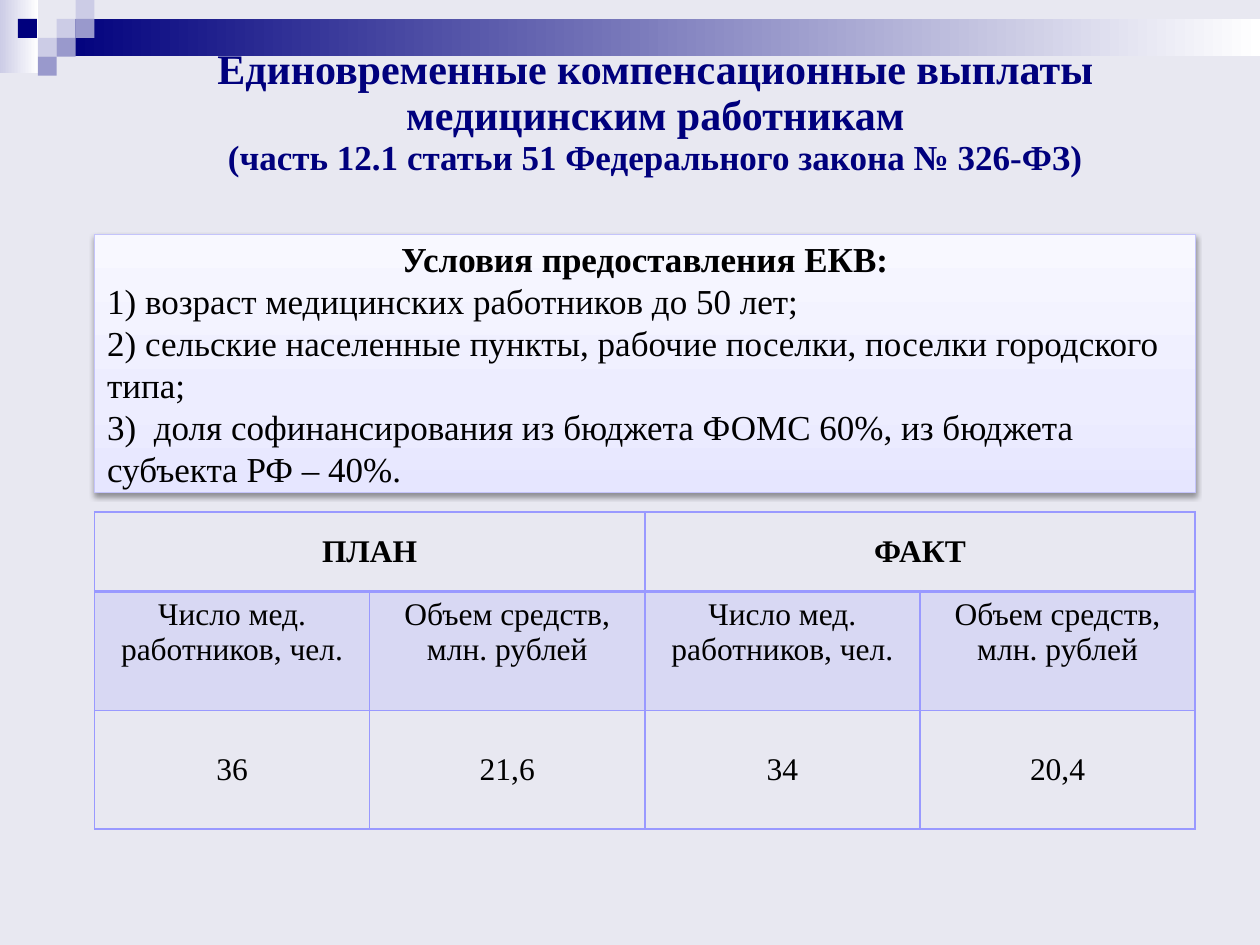
"""Build a slide on lump-sum compensation payments to medical workers."""
from copy import deepcopy
from dataclasses import dataclass

from lxml.etree import SubElement
from pptx import Presentation
from pptx.dml.color import RGBColor
from pptx.enum.shapes import MSO_SHAPE
from pptx.enum.text import MSO_ANCHOR, MSO_AUTO_SIZE, PP_ALIGN
from pptx.oxml.ns import qn
from pptx.util import Pt

NAVY, LILAC, VIOLET, WHITE = "00007D", "CCCCE6", "9999CC", "FFFFFF"
BORDER = "9999FF"
CELL = 10.8


@dataclass
class Block:
    left: float
    top: float
    width: float
    height: float
    colors: tuple[str, ...]


@dataclass
class Line:
    text: str
    size: float
    bold: bool = False
    align: PP_ALIGN = PP_ALIGN.CENTER


def color(value: str) -> RGBColor:
    return RGBColor.from_string(value)


def write_text(frame, lines: list[Line], *, ink="000000", spacing=None):
    for index, line in enumerate(lines):
        paragraph = frame.paragraphs[0] if index == 0 else frame.add_paragraph()
        paragraph.alignment = line.align
        paragraph.space_before = Pt(0)
        if spacing:
            paragraph.line_spacing = Pt(spacing)
        run = paragraph.add_run()
        run.text = line.text
        run.font.name = "Times New Roman"
        run.font.size = Pt(line.size)
        run.font.bold = line.bold
        run.font.color.rgb = color(ink)


def fill_gradient(shape, stops: list[tuple[float, str]], angle: float):
    shape.fill.gradient()
    shape.fill.gradient_angle = angle
    stop_list = next(shape.element.iter(qn("a:gsLst")))
    for _ in stops[2:]:
        stop_list.append(deepcopy(stop_list[-1]))
    for element, stop, (position, value) in zip(stop_list, shape.fill.gradient_stops, stops):
        stop.color.rgb = color(value)
        element.set("pos", str(int(position * 1000)))


def draw_block(slide, block: Block):
    shape = slide.shapes.add_shape(
        MSO_SHAPE.RECTANGLE, Pt(block.left), Pt(block.top), Pt(block.width), Pt(block.height))
    shape.shadow.inherit = False
    shape.line.fill.background()
    if len(block.colors) > 1:
        fill_gradient(shape, list(zip((0, 100), block.colors)), 0)
    else:
        shape.fill.solid()
        shape.fill.fore_color.rgb = color(block.colors[0])


def square(column: float, row: int, value: str) -> Block:
    return Block(column * CELL, row * CELL, CELL, CELL, (value,))


def draw_conditions(body):
    body.left, body.top, body.width, body.height = Pt(54), Pt(134), Pt(629), Pt(147.6)
    fill_gradient(body, [(0, "E6E6FF"), (35, "EDEDFF"), (100, "F8F8FF")], 90)
    body.line.color.rgb = color("C4C4FB")
    body.line.width = Pt(0.75)
    effects = SubElement(body.element.spPr, qn("a:effectLst"))
    shadow = SubElement(effects, qn("a:outerShdw"), blurRad=str(Pt(3.1)), dist=str(Pt(1.6)),
                        dir="5400000", rotWithShape="0")
    tone = SubElement(shadow, qn("a:srgbClr"), val="000000")
    SubElement(tone, qn("a:alpha"), val="38000")
    frame = body.text_frame
    frame.auto_size = MSO_AUTO_SIZE.NONE
    frame.word_wrap = True
    frame.vertical_anchor = MSO_ANCHOR.MIDDLE
    conditions = (
        "1) возраст медицинских работников до 50 лет;",
        "2) сельские населенные пункты, рабочие поселки, поселки городского типа;",
        "3)  доля софинансирования из бюджета ФОМС 60%, из бюджета субъекта РФ – 40%.",
    )
    write_text(frame, [Line("Условия предоставления ЕКВ:", 20, True)]
               + [Line(text, 20, align=PP_ALIGN.LEFT) for text in conditions], spacing=24)
    for paragraph in frame.paragraphs:
        properties = paragraph._p.get_or_add_pPr()
        properties.set("marL", "0")
        properties.set("indent", "0")
        SubElement(properties, qn("a:buNone"))


def add_plain_table(slide, left: float, top: float, columns: list[float], rows: list[float]):
    table = slide.shapes.add_table(
        len(rows), len(columns), Pt(left), Pt(top), Pt(sum(columns)), Pt(sum(rows))).table
    table.first_row = table.horz_banding = False
    for column, width in zip(table.columns, columns):
        column.width = Pt(width)
    for row, height in zip(table.rows, rows):
        row.height = Pt(height)
    return table


def set_borders(cell, widths: dict[str, float]):
    properties = cell._tc.get_or_add_tcPr()
    for side, width in widths.items():
        line = SubElement(properties, qn(f"a:ln{side}"), w=str(Pt(width)))
        if width:
            SubElement(SubElement(line, qn("a:solidFill")), qn("a:srgbClr"), val=BORDER)
        else:
            SubElement(line, qn("a:noFill"))


def draw_heading(slide):
    cell = add_plain_table(slide, 54, 26, [641], [62.6]).cell(0, 0)
    set_borders(cell, dict.fromkeys("LRTB", 0))
    cell.fill.background()
    cell.vertical_anchor = MSO_ANCHOR.BOTTOM
    cell.margin_left = cell.margin_right = cell.margin_top = Pt(0.7)
    cell.margin_bottom = Pt(0)
    write_text(cell.text_frame, [
        Line("Единовременные компенсационные выплаты медицинским работникам", 24, True),
        Line("(часть 12.1 статьи 51 Федерального закона № 326-ФЗ)", 20, True),
    ], ink=NAVY)


def draw_figures(slide):
    heads = ("Число мед. работников, чел.", "Объем средств, млн. рублей")
    rows = [("ПЛАН", "", "ФАКТ", ""), heads * 2, ("36", "21,6", "34", "20,4")]
    table = add_plain_table(slide, 54, 292.5, [157.25] * 4, [45.4, 68, 68])
    for column in (0, 2):
        table.cell(0, column).merge(table.cell(0, column + 1))
    for row, texts in enumerate(rows):
        for column, text in enumerate(texts):
            cell = table.cell(row, column)
            set_borders(cell, {"L": 1, "R": 1, "T": 2 if row == 1 else 1, "B": 2 if row == 0 else 1})
            if row == 1:
                cell.fill.solid()
                cell.fill.fore_color.rgb = color(BORDER)
                tone = cell._tc.tcPr.find(qn("a:solidFill"))[0]
                SubElement(tone, qn("a:alpha"), val="20000")
            else:
                cell.fill.background()
            cell.vertical_anchor = MSO_ANCHOR.TOP if row == 1 else MSO_ANCHOR.MIDDLE
            if text:
                write_text(cell.text_frame, [Line(text, 18, row == 0)])


def main():
    presentation = Presentation()
    presentation.slide_width, presentation.slide_height = Pt(720), Pt(540)
    slide = presentation.slides.add_slide(presentation.slide_layouts[1])
    slide.background.fill.solid()
    slide.background.fill.fore_color.rgb = color("E8E8F1")
    blocks = [
        Block(0, 0, 22, 42, (LILAC, WHITE)),
        Block(3 * CELL, CELL, 720 - 3 * CELL, 21.2, (NAVY, WHITE)),
        square(3, 1, LILAC), square(4, 0, LILAC), square(4, 1, VIOLET), square(2, 2, LILAC),
        square(0.95, 1, NAVY), square(3, 2, VIOLET), square(2, 3, VIOLET),
    ]
    for block in blocks:
        draw_block(slide, block)
    slide.shapes.element.remove(slide.shapes.title.element)
    draw_heading(slide)
    body = slide.placeholders[1]
    slide.shapes.element.append(body.element)
    draw_conditions(body)
    draw_figures(slide)
    presentation.save("out.pptx")


if __name__ == "__main__":
    main()
